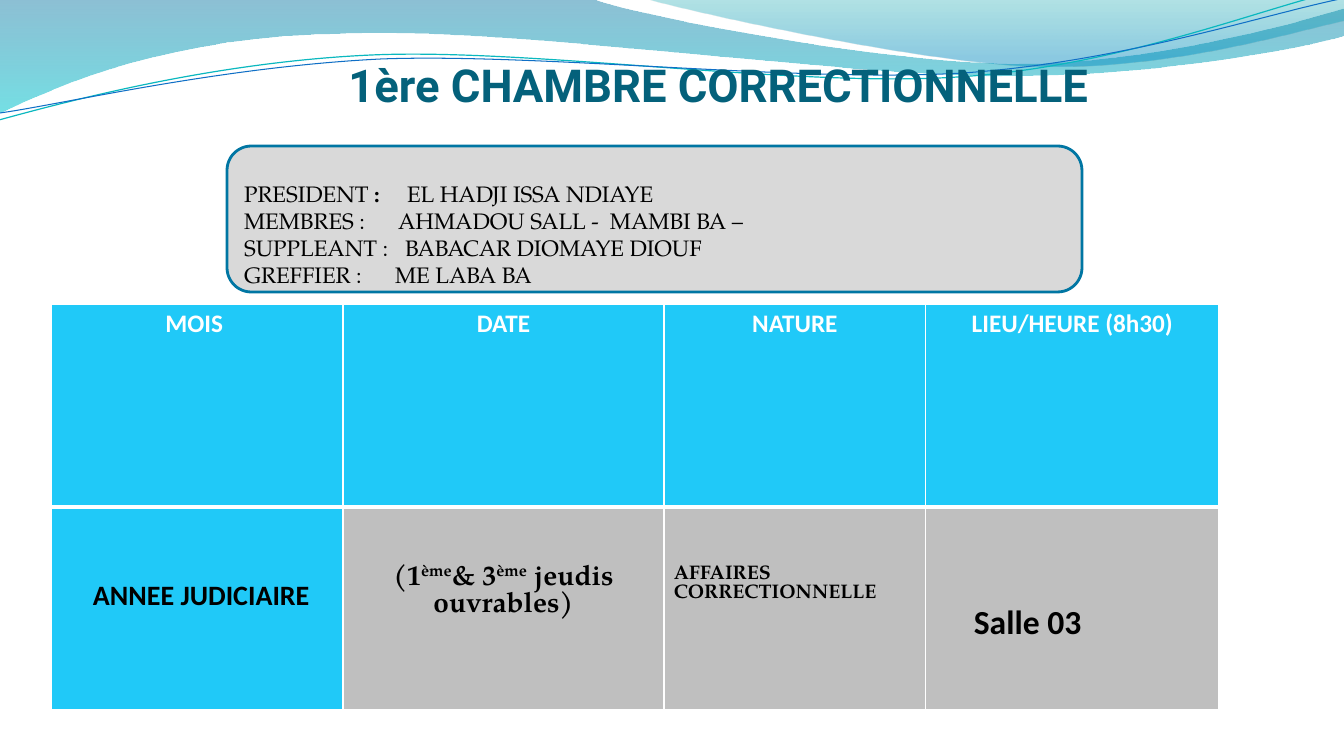
import pptx
import pptx.dml.color
import pptx.enum.shapes
import pptx.enum.text
import pptx.oxml
import pptx.oxml.ns
import pptx.util

PX = 12192000 / 1344
INK = {
    "title": "04617B", "text": "000000", "white": "FFFFFF",
    "box": "D9D9D9", "edge": "0076A3", "head": "20C9F8", "cell": "BFBFBF",
    "teal": "0AB8BF", "blue": "0F6FC6",
    "deep": "0074A1", "aqua": "00C6CF", "sea": "00A1A9", "sky": "008BBF",
}
SERIF = "TeX Gyre Pagella"
ALIGN = pptx.enum.text.PP_ALIGN
MIDDLE = pptx.enum.text.MSO_ANCHOR.MIDDLE

# Each wave is a start point, then steps: one point for a line, three for a curve.
BAND = [[(0, 0)], [(592, -1)],
        [(639, 17), (892, 64), (1019, 64)], [(1147, 64), (1288, 26), (1344, 9)],
        [(1346, 36)],
        [(1321, 44), (1169, 77), (1002, 76)], [(836, 76), (513, 28), (346, 34)],
        [(173, 36), (61, 84), (-1, 114)]]
CREST = [[(644, -1)], [(684, 11), (916, 62), (1033, 66)],
         [(1169, 70), (1292, 32), (1344, 21)], [(1344, 0)]]
CURVES = [
    ([[(-1, 120)], [(65, 102), (213, 62), (372, 55)],
      [(531, 48), (796, 88), (958, 77)], [(1119, 67), (1262, 8), (1342, -10)]],
     "teal", 0.85),
    ([[(0, 113)], [(64, 104), (220, 67), (381, 59)],
      [(541, 53), (802, 83), (963, 73)], [(1124, 62), (1265, 14), (1345, -2)]],
     "blue", 0.75),
]
ROLES = [
    ("PRESIDENT", "EL HADJI ISSA NDIAYE", 163),
    ("MEMBRES", "AHMADOU SALL -  MAMBI BA –", 154),
    ("SUPPLEANT", "BABACAR DIOMAYE DIOUF", 161),
    ("GREFFIER", "ME LABA BA", 151),
]
HEADS = ["MOIS ", "DATE", " NATURE ", "LIEU/HEURE (8h30)"]
DATES = [("(1", 0), ("ème", 30), ("& 3", 0), ("ème", 30), (" jeudis ouvrables)", 0)]


def px(num):
    return pptx.util.Emu(round(num * PX))


def rgb(name):
    return pptx.dml.color.RGBColor.from_string(INK[name])


def put(item, vals):
    for name, val in vals.items():
        setattr(item, name, val)


def inset(item, left, top, right, low):
    put(item, {"margin_left": px(left), "margin_top": px(top),
               "margin_right": px(right), "margin_bottom": px(low)})


def write(para, text, size, font, ink="text", bold=True, base=0):
    run = para.add_run()
    run.text = text
    put(run.font, {"size": pptx.util.Pt(size), "name": font, "bold": bold})
    run.font.color.rgb = rgb(ink)
    if base:
        run._r.get_or_add_rPr().set("baseline", str(base * 1000))


def draw(slide, path, close):
    """Draw an outline, joining the three points of each curve into one Bezier."""
    spots = [(px(x), px(y)) for step in path for x, y in step]
    form = slide.shapes.build_freeform(*spots[0])
    form.add_line_segments(spots[1:], close=close)
    shape = form.convert_to_shape()
    shape.shadow.inherit = False
    lines = iter(list(shape._element.iter(pptx.oxml.ns.qn("a:lnTo"))))
    for step in path[1:]:
        group = [next(lines) for _ in step]
        if len(group) == 3:
            curve = pptx.oxml.parse_xml(
                f'<a:cubicBezTo {pptx.oxml.ns.nsdecls("a")}/>')
            group[0].addprevious(curve)
            for line in group:
                curve.append(line[0])
                line.getparent().remove(line)
    return shape


def add_wave(slide, path, stops):
    """Draw a closed wave with stops of place, colour and opacity in percent."""
    shape = draw(slide, path, True)
    shape.line.fill.background()
    shape.fill.gradient()
    shape.fill.gradient_angle = 270
    for stop, (place, ink, alpha) in zip(shape.fill.gradient_stops, stops):
        stop.position = place / 100
        stop.color.rgb = rgb(ink)
        tint = stop._gs.find(pptx.oxml.ns.qn("a:srgbClr"))
        tint.append(pptx.oxml.parse_xml(
            f'<a:alpha {pptx.oxml.ns.nsdecls("a")} val="{alpha * 1000}"/>'))


def add_curve(slide, path, ink, width):
    shape = draw(slide, path, False)
    shape.fill.background()
    shape.line.color.rgb = rgb(ink)
    shape.line.width = pptx.util.Pt(width)


def add_title(slide):
    box = slide.shapes.add_textbox(px(227), px(55), px(983), px(58))
    frame = box.text_frame
    put(frame, {"word_wrap": True, "vertical_anchor": MIDDLE})
    inset(frame, 0, 0, 0, 0)
    para = frame.paragraphs[0]
    para.alignment = ALIGN.CENTER
    write(para, "1ère CHAMBRE CORRECTIONNELLE", 32.4, "Roboto", "title")


def add_roles(slide):
    kind = pptx.enum.shapes.MSO_SHAPE.ROUNDED_RECTANGLE
    box = slide.shapes.add_shape(kind, px(227), px(146), px(855), px(146))
    box.shadow.inherit = False
    box.fill.solid()
    box.fill.fore_color.rgb = rgb("box")
    box.line.color.rgb = rgb("edge")
    box.line.width = pptx.util.Pt(2)
    frame = box.text_frame
    put(frame, {"word_wrap": True, "vertical_anchor": MIDDLE})
    inset(frame, 10, 30, 10, 0)
    for i, (role, name, stop) in enumerate(ROLES):
        para = frame.add_paragraph() if i else frame.paragraphs[0]
        para.alignment = ALIGN.LEFT
        para._p.get_or_add_pPr().append(pptx.oxml.parse_xml(
            f'<a:tabLst {pptx.oxml.ns.nsdecls("a")}>'
            f'<a:tab pos="{px(stop)}" algn="l"/></a:tabLst>'))
        write(para, role + " ", 16, SERIF, bold=False)
        write(para, ":", 16, SERIF, bold=i == 0)
        write(para, "\t" + name, 16, SERIF, bold=False)


def edge(cell, widths):
    """Give the cell white borders, with widths in points by side."""
    for i, (side, width) in enumerate(widths.items()):
        cell._tc.get_or_add_tcPr().insert(i, pptx.oxml.parse_xml(
            f'<a:ln{side} {pptx.oxml.ns.nsdecls("a")} w="{pptx.util.Pt(width)}">'
            f'<a:solidFill><a:srgbClr val="{INK["white"]}"/></a:solidFill></a:ln{side}>'))


def fill_cell(cell, runs, size, font, ink, space, align, left, top):
    para = cell.text_frame.paragraphs[0]
    put(para, {"alignment": align, "line_spacing": space})
    inset(cell, left, top, 7, 0)
    for text, base in runs:
        write(para, text, size, font, ink, base=base)


def add_grid(slide):
    wides, highs = [292, 321, 262, 293], [203, 203]
    grid = slide.shapes.add_table(2, 4, px(51), px(304),
                                  px(sum(wides)), px(sum(highs))).table
    for col, wide in zip(grid.columns, wides):
        col.width = px(wide)
    for row, high in zip(grid.rows, highs):
        row.height = px(high)
    for r in range(2):
        for c in range(4):
            cell = grid.cell(r, c)
            cell.fill.solid()
            cell.fill.fore_color.rgb = rgb("cell" if r and c else "head")
            edge(cell, {"L": 1, "R": 1, "T": 3 if r else 1, "B": 1 if r else 3})
    for c, head in enumerate(HEADS):
        fill_cell(grid.cell(0, c), [(head, 0)], 18, "Calibri", "white",
                  1.15, ALIGN.CENTER, 7, 0)
    facts = [
        ([("ANNEE JUDICIAIRE", 0)], 20, "Calibri", 1.15, ALIGN.LEFT, 42, 67),
        (DATES, 20, SERIF, 1.0, ALIGN.CENTER, 7, 58),
        ([("AFFAIRES CORRECTIONNELLE", 0)], 14, SERIF, 1.0, ALIGN.LEFT, 10, 58),
        ([("Salle 03", 0)], 24, "Calibri", 1.15, ALIGN.LEFT, 48, 90),
    ]
    for c, (runs, size, font, *place) in enumerate(facts):
        fill_cell(grid.cell(1, c), runs, size, font, "text", *place)


def main():
    deck = pptx.Presentation()
    put(deck, {"slide_width": px(1344), "slide_height": px(756)})
    slide = deck.slides.add_slide(deck.slide_layouts[6])
    add_wave(slide, BAND, [(0, "deep", 45), (100, "aqua", 55)])
    add_wave(slide, CREST, [(0, "sea", 30), (80, "sky", 45)])
    for path, ink, width in CURVES:
        add_curve(slide, path, ink, width)
    add_title(slide)
    add_roles(slide)
    add_grid(slide)
    deck.save("out.pptx")


if __name__ == "__main__":
    main()
